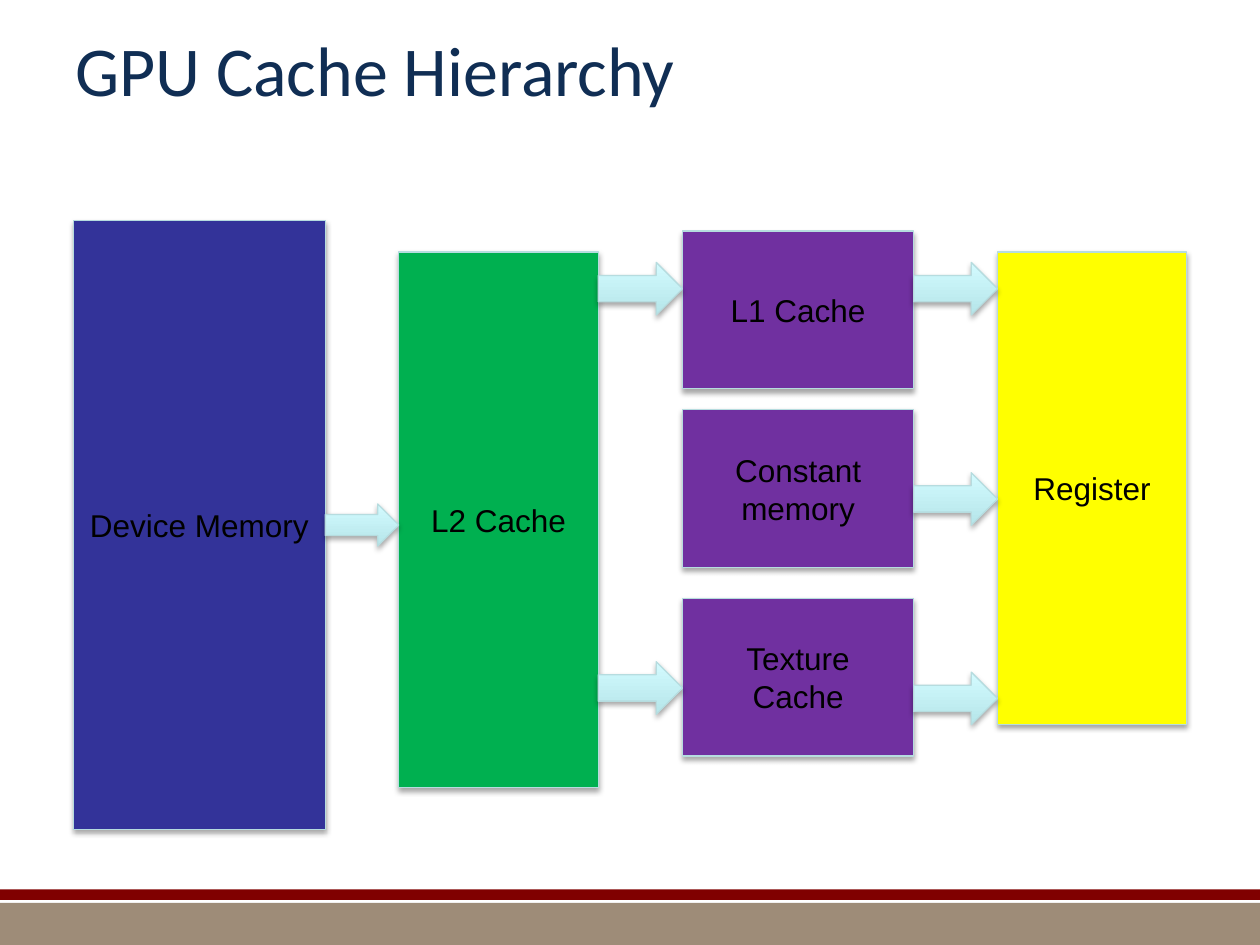
"""Build the GPU cache hierarchy slide."""
from typing import NamedTuple

from lxml.etree import SubElement
from pptx import Presentation
from pptx.dml.color import RGBColor
from pptx.enum.shapes import MSO_SHAPE as Preset
from pptx.enum.text import MSO_ANCHOR as Anchor, PP_ALIGN as Align
from pptx.oxml.ns import qn
from pptx.util import Cm, Pt

NAVY = RGBColor(0x10, 0x2E, 0x54)
INDIGO = RGBColor(0x33, 0x33, 0x99)
GREEN = RGBColor(0x00, 0xB0, 0x50)
PURPLE = RGBColor(0x70, 0x30, 0xA0)
YELLOW = RGBColor(0xFF, 0xFF, 0x00)
BLACK = RGBColor(0x00, 0x00, 0x00)
TAUPE = RGBColor(0x9E, 0x8C, 0x78)
MAROON = RGBColor(0x80, 0x00, 0x00)
OUTLINE = RGBColor(0xB6, 0xDC, 0xDF)
ARROW_BOTTOM = RGBColor(0xB5, 0xE5, 0xE9)
ARROW_TOP = RGBColor(0xD3, 0xFB, 0xFF)

TITLE_FORMAT = {"name": "Calibri", "size": Pt(40)}
LABEL_FORMAT = {"name": "Arial", "size": Pt(18)}


class Memory(NamedTuple):
    label: str
    left: float
    top: float
    width: float
    height: float
    color: RGBColor


class Flow(NamedTuple):
    source: Memory
    target: Memory
    top: float
    height: float = 1.06


class Band(NamedTuple):
    top: float
    height: float
    color: RGBColor


DEVICE = Memory("Device Memory", 1.48, 4.44, 5.08, 12.28, INDIGO)
L2 = Memory("L2 Cache", 8.04, 5.08, 4.02, 10.8, GREEN)
L1, CONSTANT, TEXTURE = (
    Memory(label, 13.76, top, 4.66, 3.18, PURPLE)
    for label, top in (("L1 Cache", 4.66), ("Constant memory", 8.26), ("Texture\vCache", 12.06))
)
REGISTER = Memory("Register", 20.11, 5.08, 3.81, 9.53, YELLOW)
MEMORIES = (DEVICE, L2, L1, CONSTANT, TEXTURE, REGISTER)
FLOWS = (
    Flow(DEVICE, L2, 10.16, 0.85),
    Flow(L2, L1, 5.29),
    Flow(L2, TEXTURE, 13.34),
    Flow(L1, REGISTER, 5.29),
    Flow(CONSTANT, REGISTER, 9.53),
    Flow(TEXTURE, REGISTER, 13.55),
)
BANDS = (Band(18.2, 0.85, TAUPE), Band(17.93, 0.21, MAROON))


def write(box, text: str, color: RGBColor, align: Align, font_format: dict) -> None:
    """Put one formatted paragraph, vertically centred, into a shape."""
    frame = box.text_frame
    frame.word_wrap = True
    frame.vertical_anchor = Anchor.MIDDLE
    frame.text = text
    para = frame.paragraphs[0]
    para.alignment = align
    for span in para.runs:
        for name, value in font_format.items():
            setattr(span.font, name, value)
        span.font.color.rgb = color


def decorate(box) -> None:
    """Give a shape its thin outline and soft shadow below."""
    box.line.color.rgb = OUTLINE
    box.line.width = Pt(0.75)
    box.shadow.inherit = False
    effects = box._element.spPr.find(qn("a:effectLst"))
    shadow = SubElement(effects, qn("a:outerShdw"), blurRad="40000", dist="23000",
                        dir="5400000", rotWithShape="0")
    tint = SubElement(shadow, qn("a:srgbClr"), val="000000")
    SubElement(tint, qn("a:alpha"), val="35000")


def draw_band(page, band: Band, width: int) -> None:
    """Draw a full-width footer band."""
    box = page.shapes.add_shape(Preset.RECTANGLE, 0, Cm(band.top), width, Cm(band.height))
    box.shadow.inherit = False
    box.fill.solid()
    box.fill.fore_color.rgb = band.color
    box.line.fill.background()


def draw_memory(page, memory: Memory) -> None:
    """Draw one labelled memory block."""
    box = page.shapes.add_shape(Preset.RECTANGLE, Cm(memory.left), Cm(memory.top),
                                Cm(memory.width), Cm(memory.height))
    box.fill.solid()
    box.fill.fore_color.rgb = memory.color
    decorate(box)
    write(box, memory.label, BLACK, Align.CENTER, LABEL_FORMAT)


def draw_flow(page, flow: Flow) -> None:
    """Draw a block arrow that fills the gap between two memories."""
    left = flow.source.left + flow.source.width
    box = page.shapes.add_shape(Preset.RIGHT_ARROW, Cm(left), Cm(flow.top),
                                Cm(flow.target.left - left), Cm(flow.height))
    box.fill.gradient()
    box.fill.gradient_angle = 90
    for stop, color in zip(box.fill.gradient_stops, (ARROW_BOTTOM, ARROW_TOP)):
        stop.color.rgb = color
    decorate(box)


def main() -> None:
    """Assemble and save the deck."""
    deck = Presentation()
    deck.slide_width, deck.slide_height = Cm(25.4), Cm(19.05)
    page = deck.slides.add_slide(deck.slide_layouts[6])
    for band in BANDS:
        draw_band(page, band, deck.slide_width)
    title = page.shapes.add_textbox(Cm(1.27), 0, Cm(22.86), Cm(2.75))
    write(title, "GPU Cache Hierarchy", NAVY, Align.LEFT, TITLE_FORMAT)
    for memory in MEMORIES:
        draw_memory(page, memory)
    for flow in FLOWS:
        draw_flow(page, flow)
    deck.save("out.pptx")


if __name__ == "__main__":
    main()
